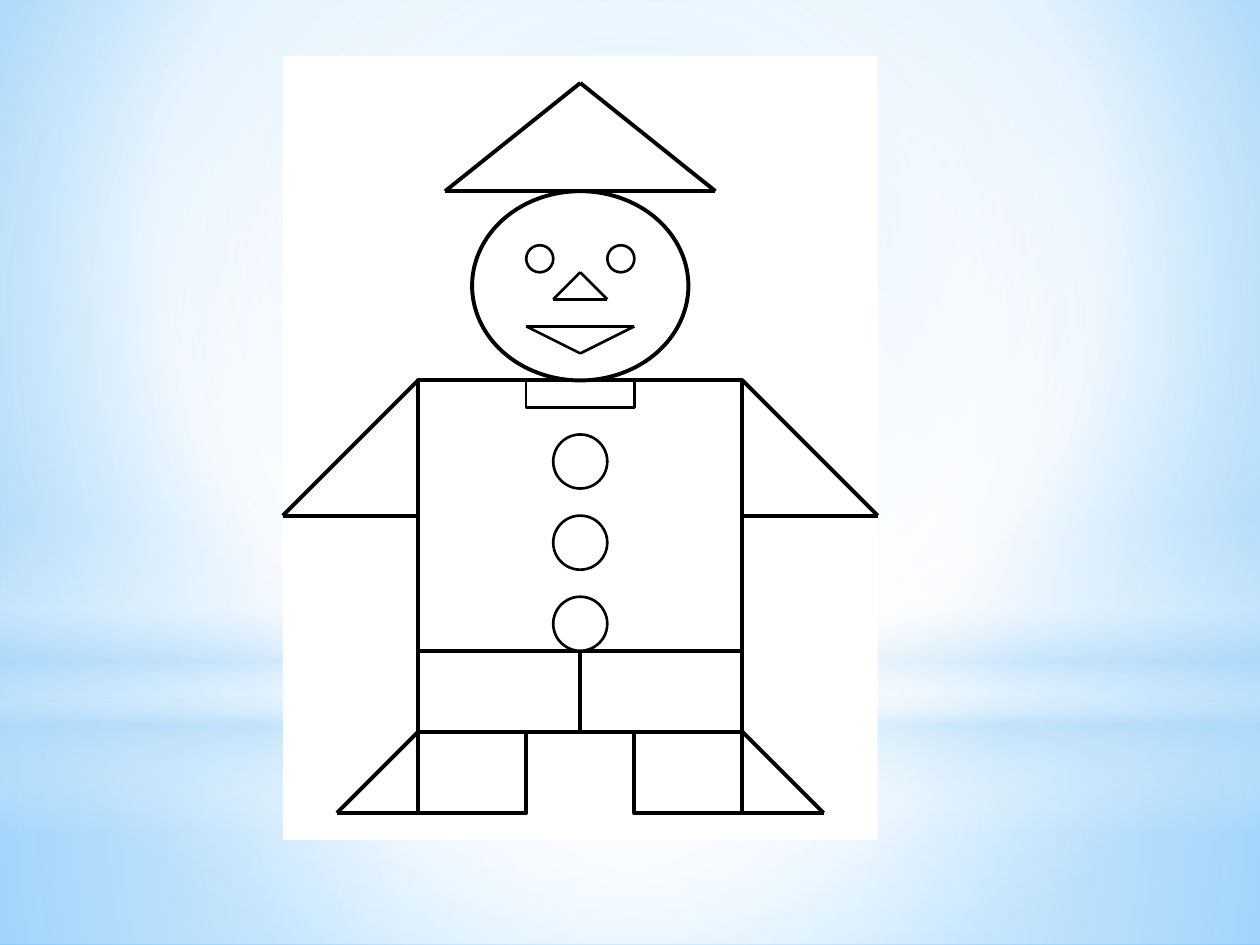
from dataclasses import dataclass

from lxml import etree
from pptx import Presentation
from pptx.dml.color import RGBColor
from pptx.enum import shapes as kinds
from pptx.oxml.ns import qn
from pptx.util import Pt

RECT = kinds.MSO_SHAPE.RECTANGLE
OVAL = kinds.MSO_SHAPE.OVAL


@dataclass(frozen=True)
class Theme:
    white: str = "FFFFFF"
    ink: str = "000000"
    sky: str = "9ED5FF"
    deep: str = "5BB9FF"
    mist: str = "B4DCFA"
    thick: float = 2.25
    thin: float = 1.5


@dataclass(frozen=True)
class Grid:
    """Square grid with its origin at the middle of the neck line."""
    left: float = 331.6
    top: float = 217.4
    unit: float = 15.45

    def x(self, col):
        return Pt(self.left + col * self.unit)

    def y(self, row):
        return Pt(self.top + row * self.unit)

    def size(self, count):
        return Pt(count * self.unit)


THEME = Theme()
GRID = Grid()
CENTER = (50, 50, 50, 50)


def blend(fill, root, stops, focus=None):
    """Fill with (position, colour, opacity) stops, round a focus or downwards."""
    fill.gradient()
    grad = next(root.iter(qn("a:gradFill")))
    for child in list(grad):
        grad.remove(child)
    items = etree.SubElement(grad, qn("a:gsLst"))
    for place, color, alpha in stops:
        stop = etree.SubElement(items, qn("a:gs"), pos=str(place * 1000))
        tint = etree.SubElement(stop, qn("a:srgbClr"), val=color)
        if alpha < 100:
            etree.SubElement(tint, qn("a:alpha"), val=str(alpha * 1000))
    if focus:
        path = etree.SubElement(grad, qn("a:path"), path="circle")
        edges = {side: str(part * 1000) for side, part in zip("ltrb", focus)}
        etree.SubElement(path, qn("a:fillToRect"), **edges)
    else:
        etree.SubElement(grad, qn("a:lin"), ang="5400000", scaled="0")


def glow(slide, kind, top, height, stops, focus=None):
    """Add a soft layer as wide as the slide."""
    layer = slide.shapes.add_shape(kind, 0, Pt(top), Pt(720), Pt(height))
    layer.shadow.inherit = False
    layer.line.fill.background()
    blend(layer.fill, layer.element, stops, focus)


def sky(slide):
    t = THEME
    blend(slide.background.fill, slide.element,
          [(0, t.sky, 100), (60, t.white, 100), (100, t.deep, 100)],
          (20, 10, 20, 60))
    glow(slide, RECT, 402, 138,
         [(0, t.white, 91), (37, t.white, 76), (100, t.mist, 79)], CENTER)
    glow(slide, RECT, 0, 402,
         [(0, t.white, 89), (48, t.white, 62), (100, t.mist, 79)], CENTER)
    glow(slide, RECT, 296.6, 180,
         [(0, t.white, 0), (29, t.white, 30), (45, t.mist, 40),
          (55, t.white, 26), (65, t.mist, 60), (100, t.white, 0)])
    glow(slide, OVAL, 126, 402, [(0, t.white, 100), (56, t.white, 0)], CENTER)


def part(group, kind, col, row, wide, high, width=None):
    """Add a white shape on the grid, outlined if a line width is given."""
    shape = group.shapes.add_shape(kind, GRID.x(col), GRID.y(row),
                                   GRID.size(wide), GRID.size(high))
    shape.shadow.inherit = False
    shape.fill.solid()
    shape.fill.fore_color.rgb = RGBColor.from_string(THEME.white)
    if width:
        shape.line.color.rgb = RGBColor.from_string(THEME.ink)
        shape.line.width = Pt(width)
    else:
        shape.line.fill.background()
    return shape


def stroke(group, start, end, width):
    line = group.shapes.add_connector(
        kinds.MSO_CONNECTOR.STRAIGHT,
        GRID.x(start[0]), GRID.y(start[1]), GRID.x(end[0]), GRID.y(end[1]))
    line.line.color.rgb = RGBColor.from_string(THEME.ink)
    line.line.width = Pt(width)
    etree.SubElement(line.element.spPr, qn("a:effectLst"))
    return line


def chain(group, points, width):
    for start, end in zip(points, points[1:]):
        stroke(group, start, end, width)


def trunk(group):
    thick, thin = THEME.thick, THEME.thin
    body = part(group, RECT, -6, 0, 12, 13, thick)
    stroke(group, (-6, 10), (6, 10), thick)
    seam = stroke(group, (0, 10), (0, 13), thick)
    seam.end_connect(body, 2)
    for row in (2, 5, 8):
        part(group, OVAL, -1, row, 2, 2, thin)
    part(group, RECT, -2, 0, 4, 1, thin)


def limbs(group):
    thick = THEME.thick
    for side in (1, -1):
        chain(group, [(6 * side, 0), (11 * side, 5), (6 * side, 5)], thick)
        part(group, RECT, 4 * side - 2, 13, 4, 3, thick)
        chain(group, [(6 * side, 16), (9 * side, 16), (6 * side, 13)], thick)


def head(group):
    thick, thin = THEME.thick, THEME.thin
    part(group, OVAL, -4, -7, 8, 7, thick)
    hat = [(-5, -7), (5, -7), (0, -11), (-5, -7)]
    mouth = [(-2, -2), (2, -2), (0, -1), (-2, -2)]
    nose = [(0, -4), (1, -3), (-1, -3), (0, -4)]
    for points, width in ((hat, thick), (mouth, thin), (nose, thin)):
        chain(group, points, width)
    for col in (-2, 1):
        part(group, OVAL, col, -5, 1, 1, thin)


def main():
    deck = Presentation()
    deck.slide_width, deck.slide_height = Pt(720), Pt(540)
    slide = deck.slides.add_slide(deck.slide_layouts[6])
    sky(slide)
    figure = slide.shapes.add_group_shape()
    part(figure, RECT, -11, -12, 22, 29)
    trunk(figure)
    limbs(figure)
    head(figure)
    deck.save("out.pptx")


if __name__ == "__main__":
    main()
